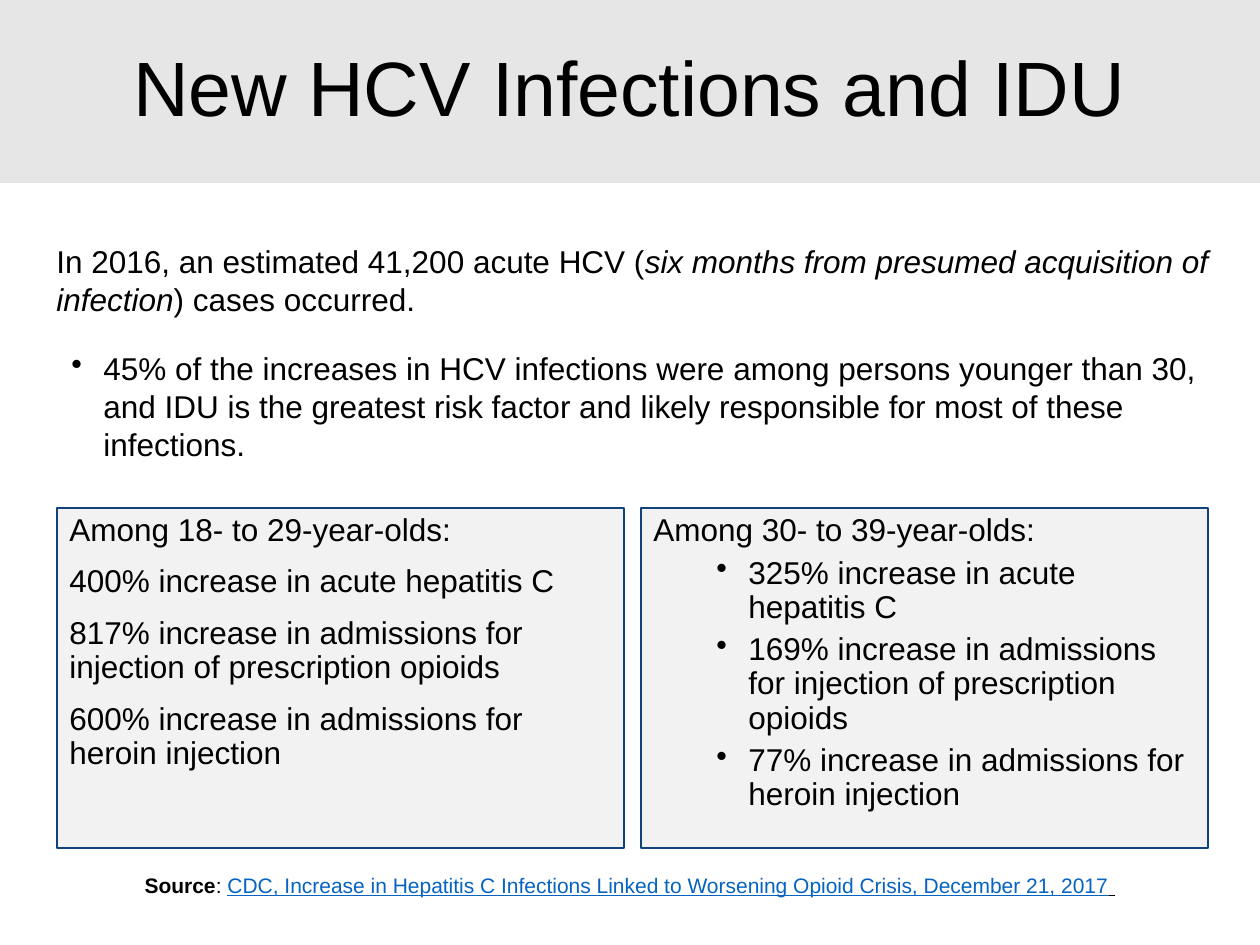
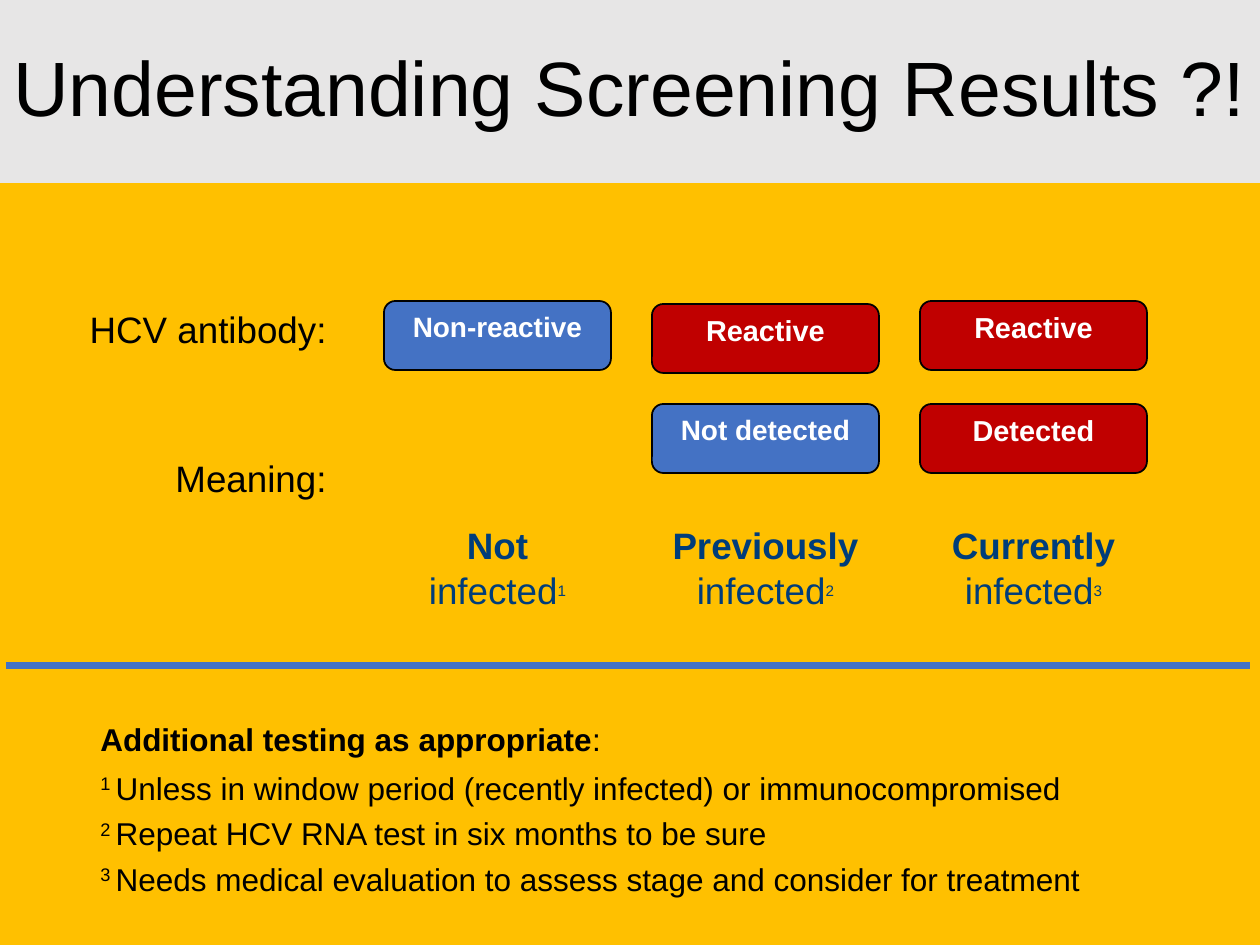
import pptx
import pptx.util
import pptx.dml.color
import pptx.enum.shapes
import pptx.enum.text
import pptx.oxml.ns
from dataclasses import dataclass
from lxml import etree

SHAPES = pptx.enum.shapes.MSO_SHAPE
ANCHOR = pptx.enum.text.MSO_ANCHOR
ALIGN = pptx.enum.text.PP_ALIGN
LEFT, CENTER, RIGHT = ALIGN.LEFT, ALIGN.CENTER, ALIGN.RIGHT


@dataclass(frozen=True)
class Theme:
    font: str = "Arial"
    black: str = "000000"
    white: str = "FFFFFF"
    band: str = "E7E6E6"
    amber: str = "FFC000"
    panel: str = "F2F2F2"
    panel_edge: str = "11437A"
    link: str = "0563C1"
    blue: str = "4472C4"
    red: str = "C00000"
    navy: str = "003D7A"
    title_size: float = 44
    label_size: float = 21
    body_size: float = 18
    positive_size: float = 16.5
    negative_size: float = 16
    mark_size: float = 15
    source_size: float = 12


THEME = Theme()
PX_PER_INCH = 126
PAGE_WIDTH, PAGE_HEIGHT = 1260, 945
BAND_HEIGHT = 183

# Content: a line is a list of (text, style) spans
INFECTIONS_TITLE = "New HCV Infections and IDU"
ESTIMATE = [
    ("In 2016, an estimated 41,200 acute HCV (", {}),
    ("six months from presumed acquisition of infection", {"italic": True}),
    (") cases occurred.", {}),
]
RISK_FACTOR = ("45% of the increases in HCV infections were among persons younger than 30, "
               "and IDU is the greatest risk factor and likely responsible for most of these "
               "infections.")
AGE_GROUPS = [
    ("Among 18- to 29-year-olds:", {"before": 10}, [
        "400% increase in acute hepatitis C",
        "817% increase in admissions for injection of prescription opioids",
        "600% increase in admissions for heroin injection",
    ]),
    ("Among 30- to 39-year-olds:", {"before": 5, "bullet": True, "margin": 95, "hang": 32}, [
        "325% increase in acute hepatitis C",
        "169% increase in admissions for injection of prescription opioids",
        "77% increase in admissions for heroin injection",
    ]),
]
SOURCE = [
    ("Source", {"bold": True}),
    (": ", {}),
    ("CDC, Increase in Hepatitis C Infections Linked to Worsening Opioid Crisis, "
     "December 21, 2017", {"color": THEME.link, "underline": True}),
    (" ", {"underline": True}),
]

SCREENING_TITLE = "Understanding Screening Results ?!"
ROW_LABELS = [("HCV antibody:", 306), ("Meaning:", 455)]
NEGATIVE = (THEME.blue, THEME.negative_size)
POSITIVE = (THEME.red, THEME.positive_size)
# (text, column, top, look)
TEST_RESULTS = [
    ("Non-reactive", 0, 301, NEGATIVE),
    ("Reactive", 1, 304, POSITIVE),
    ("Reactive", 2, 301, POSITIVE),
    ("Not detected", 1, 404, NEGATIVE),
    ("Detected", 2, 404, POSITIVE),
]
MEANINGS = ["Not", "Previously", "Currently"]
FOLLOW_UP = [("Additional testing as appropriate", {"bold": True}), (":", {})]
FOOTNOTES = [
    "Unless in window period (recently infected) or immunocompromised",
    "Repeat HCV RNA test in six months to be sure",
    "Needs medical evaluation to assess stage and consider for treatment",
]


# Helpers
def px(length):
    return pptx.util.Emu(round(length * 914400 / PX_PER_INCH))


def rgb(color):
    return pptx.dml.color.RGBColor.from_string(color)


def add_span(para, text, size, color=THEME.black, bold=False, italic=False,
             underline=False, raised=False):
    span = para.add_run()
    span.text = text
    font = span.font
    font.name, font.size, font.color.rgb = THEME.font, pptx.util.Pt(size), rgb(color)
    font.bold, font.italic, font.underline = bold, italic, underline
    if raised:
        span._r.get_or_add_rPr().set("baseline", "30000")


def add_para(box, spans, size=THEME.body_size, align=LEFT, spacing=None, before=0, after=0,
             bullet=False, margin=0, hang=0):
    frame = box.text_frame
    first = not frame.paragraphs[0].runs
    para = frame.paragraphs[0] if first else frame.add_paragraph()
    properties = para._p.get_or_add_pPr()
    properties.set("marL", str(px(margin)))
    properties.set("indent", str(-px(hang)))
    if bullet:
        mark = etree.SubElement(properties, pptx.oxml.ns.qn("a:buChar"))
        mark.set("char", "•")
    para.alignment = align
    if spacing:
        para.line_spacing = spacing
    para.space_before = pptx.util.Pt(0 if first else before)
    para.space_after = pptx.util.Pt(after)
    for text, style in spans:
        add_span(para, text, **{"size": size, **style})


def add_text_box(page, left, top, width, height):
    box = page.shapes.add_textbox(px(left), px(top), px(width), px(height))
    box.text_frame.word_wrap = True
    return box


def add_filled_box(page, left, top, width, height, fill, edge=None, edge_width=1,
                   kind=SHAPES.RECTANGLE, anchor=ANCHOR.TOP):
    box = page.shapes.add_shape(kind, px(left), px(top), px(width), px(height))
    box.shadow.inherit = False
    box.fill.solid()
    box.fill.fore_color.rgb = rgb(fill)
    if edge:
        box.line.color.rgb = rgb(edge)
        box.line.width = pptx.util.Pt(edge_width)
    else:
        box.line.fill.background()
    box.text_frame.word_wrap = True
    box.text_frame.vertical_anchor = anchor
    return box


def add_page(deck, title, background):
    page = deck.slides.add_slide(deck.slide_layouts[6])
    page.background.fill.solid()
    page.background.fill.fore_color.rgb = rgb(background)
    band = add_filled_box(page, 0, 0, PAGE_WIDTH, BAND_HEIGHT, THEME.band, anchor=ANCHOR.MIDDLE)
    add_para(band, [(title, {})], THEME.title_size, CENTER, 0.9)
    return page


def build_infections(deck):
    page = add_page(deck, INFECTIONS_TITLE, THEME.white)

    # Introduction
    intro = add_text_box(page, 44, 236, 1180, 270)
    add_para(intro, ESTIMATE, before=6, after=12)
    add_para(intro, [(RISK_FACTOR, {})], before=6, after=12, bullet=True, margin=47, hang=32)

    # Age group panels
    panel_width, panel_gap = 567, 17
    for column, (heading, layout, increases) in enumerate(AGE_GROUPS):
        left = 57 + column * (panel_width + panel_gap)
        panel = add_filled_box(page, left, 508, panel_width, 340, THEME.panel,
                               THEME.panel_edge, 0.75)
        add_para(panel, [(heading, {})], spacing=0.9)
        for increase in increases:
            add_para(panel, [(increase, {})], spacing=0.9, **layout)

    # Source line
    source = add_text_box(page, 0, 869, PAGE_WIDTH, 76)
    add_para(source, SOURCE, THEME.source_size, CENTER, 0.9)


def build_screening(deck):
    page = add_page(deck, SCREENING_TITLE, THEME.amber)
    column_width, column_pitch = 227, 268

    def column_left(column):
        return 384 + column * column_pitch

    # Row labels
    for label, top in ROW_LABELS:
        box = add_text_box(page, 24, top, 315, 50)
        add_para(box, [(label, {})], THEME.label_size, RIGHT, 0.9)

    # Test results
    for result, column, top, (fill, size) in TEST_RESULTS:
        box = add_filled_box(page, column_left(column), top, column_width, 69, fill,
                             THEME.black, kind=SHAPES.FLOWCHART_ALTERNATE_PROCESS)
        frame = box.text_frame
        frame.word_wrap = False
        frame.margin_left = frame.margin_right = px(9)
        frame.margin_top = frame.margin_bottom = px(5)
        add_para(box, [(result, {"color": THEME.white, "bold": True})], size, CENTER)

    # Meanings with footnote marks
    navy = {"color": THEME.navy}
    for column, meaning in enumerate(MEANINGS):
        box = add_text_box(page, column_left(column), 517, column_width, 102)
        spans = [
            (meaning, {**navy, "bold": True}),
            (" infected", navy),
            (str(column + 1), {**navy, "size": THEME.mark_size, "raised": True}),
        ]
        add_para(box, spans, THEME.label_size, CENTER)

    # Divider
    divider = page.shapes.add_connector(pptx.enum.shapes.MSO_CONNECTOR.STRAIGHT,
                                        px(6), px(666), px(1250), px(666))
    divider.line.color.rgb = rgb(THEME.blue)
    divider.line.width = pptx.util.Pt(4)
    etree.SubElement(divider._element.spPr, pptx.oxml.ns.qn("a:effectLst"))

    # Footnotes
    notes = add_text_box(page, 88, 714, 1081, 194)
    add_para(notes, FOLLOW_UP, after=6, margin=11, hang=11)
    for number, note in enumerate(FOOTNOTES, start=1):
        add_para(notes, [(f"{number} ", {"raised": True}), (note, {})], after=4.5,
                 margin=11, hang=11)


def main():
    deck = pptx.Presentation()
    deck.slide_width, deck.slide_height = px(PAGE_WIDTH), px(PAGE_HEIGHT)
    build_infections(deck)
    build_screening(deck)
    deck.save("out.pptx")


if __name__ == "__main__":
    main()
